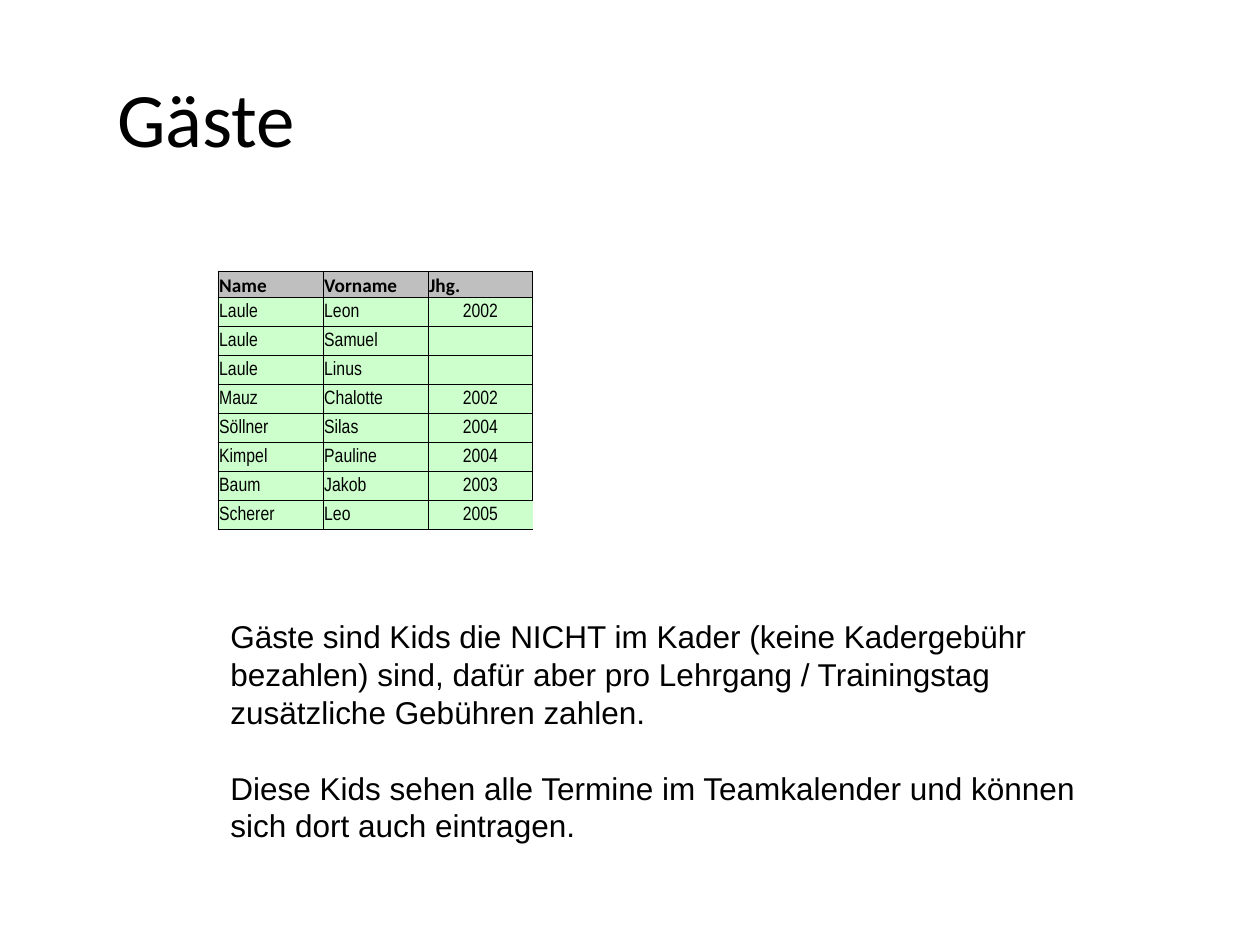
from lxml.etree import SubElement
from pptx import Presentation
from pptx.dml.color import RGBColor
from pptx.enum.text import MSO_ANCHOR, MSO_AUTO_SIZE, PP_ALIGN
from pptx.oxml.ns import qn
from pptx.util import Inches, Pt

COLORS = {"ink": "000000", "header": "BFBFBF", "body": "CCFFCC"}
HEADERS = ("Name", "Vorname", "Jhg.")
GUESTS = [
    ("Laule", "Leon", "2002"),
    ("Laule", "Samuel", ""),
    ("Laule", "Linus", ""),
    ("Mauz", "Chalotte", "2002"),
    ("Söllner", "Silas", "2004"),
    ("Kimpel", "Pauline", "2004"),
    ("Baum", "Jakob", "2003"),
    ("Scherer", "Leo", "2005"),
]
NOTES = [
    "Gäste sind Kids die NICHT im Kader (keine Kadergebühr bezahlen) sind, "
    "dafür aber pro Lehrgang / Trainingstag zusätzliche Gebühren zahlen.",
    "Diese Kids sehen alle Termine im Teamkalender und können sich dort auch eintragen.",
]


def write(paragraph, text, font="Arial", size=18, bold=False, align=PP_ALIGN.LEFT, before=0):
    """Write formatted text into a paragraph."""
    paragraph.alignment = align
    if before:
        paragraph.space_before = Pt(before)
    if not text:
        SubElement(paragraph._p, qn("a:endParaRPr"), sz=str(size * 100))
        return
    run = paragraph.add_run()
    run.text = text
    run.font.name = font
    run.font.size = Pt(size)
    run.font.bold = bold
    run.font.color.rgb = RGBColor.from_string(COLORS["ink"])


class GuestSlide:
    """Hold the current slide and its style."""

    def __init__(self, presentation):
        """Add a title-only slide."""
        self.slide = presentation.slides.add_slide(presentation.slide_layouts[5])

    def title(self, text, left, top, width, height):
        """Place and fill the title."""
        shape = self.slide.shapes.title
        shape.left, shape.top = Inches(left), Inches(top)
        shape.width, shape.height = Inches(width), Inches(height)
        shape.text_frame.vertical_anchor = MSO_ANCHOR.MIDDLE
        write(shape.text_frame.paragraphs[0], text, font="Calibri", size=44)

    def text(self, texts, left, top, width, height, gap):
        """Add a text box with spaced paragraphs."""
        shape = self.slide.shapes.add_textbox(
            Inches(left), Inches(top), Inches(width), Inches(height))
        frame = shape.text_frame
        frame.word_wrap = True
        frame.auto_size = MSO_AUTO_SIZE.SHAPE_TO_FIT_TEXT
        for index, text in enumerate(texts):
            paragraph = frame.add_paragraph() if index else frame.paragraphs[0]
            write(paragraph, text, before=gap if index else 0)

    def borders(self, cell, sides):
        """Draw thin borders on the given sides of a cell."""
        properties = cell._tc.get_or_add_tcPr()
        for side in "LRTB":
            visible = side in sides
            line = SubElement(properties, qn(f"a:ln{side}"), w=str(Pt(0.5) if visible else 0))
            fill = SubElement(line, qn("a:solidFill" if visible else "a:noFill"))
            if visible:
                SubElement(fill, qn("a:srgbClr"), val=COLORS["ink"])

    def cell(self, cell, text, header, centered, sides):
        """Format and fill one table cell."""
        cell.margin_left = cell.margin_right = cell.margin_top = Inches(0.01)
        cell.margin_bottom = 0
        cell.vertical_anchor = MSO_ANCHOR.BOTTOM if header else MSO_ANCHOR.MIDDLE
        self.borders(cell, sides)
        cell.fill.solid()
        cell.fill.fore_color.rgb = RGBColor.from_string(COLORS["header" if header else "body"])
        write(cell.text_frame.paragraphs[0], text, size=11, bold=header,
              font="Calibri" if header else "Arial Narrow",
              align=PP_ALIGN.CENTER if centered else PP_ALIGN.LEFT)

    def table(self, rows, left, top, width, header_height, row_height):
        """Add a table with a header row."""
        height = header_height + row_height * (len(rows) - 1)
        table = self.slide.shapes.add_table(
            len(rows), len(rows[0]), Inches(left), Inches(top),
            Inches(width), Inches(height)).table
        last = (len(rows) - 1, len(rows[0]) - 1)
        for row, values in enumerate(rows):
            table.rows[row].height = Inches(row_height if row else header_height)
            for column, value in enumerate(values):
                sides = "LTB" if (row, column) == last else "LRTB"
                self.cell(table.cell(row, column), value, row == 0,
                          row > 0 and column == last[1], sides)


def main():
    """Build and save the guest slide."""
    presentation = Presentation()
    presentation.slide_width, presentation.slide_height = Inches(10), Inches(7.5)
    page = GuestSlide(presentation)
    page.title("Gäste", 0.83, 0.3, 8.83, 1.25)
    page.text(NOTES, 1.73, 4.85, 7.4, 1.92, gap=21.6)
    page.table([HEADERS, *GUESTS], 1.73, 2.15, 2.5, 0.21, 0.23)
    presentation.save("out.pptx")


if __name__ == "__main__":
    main()
